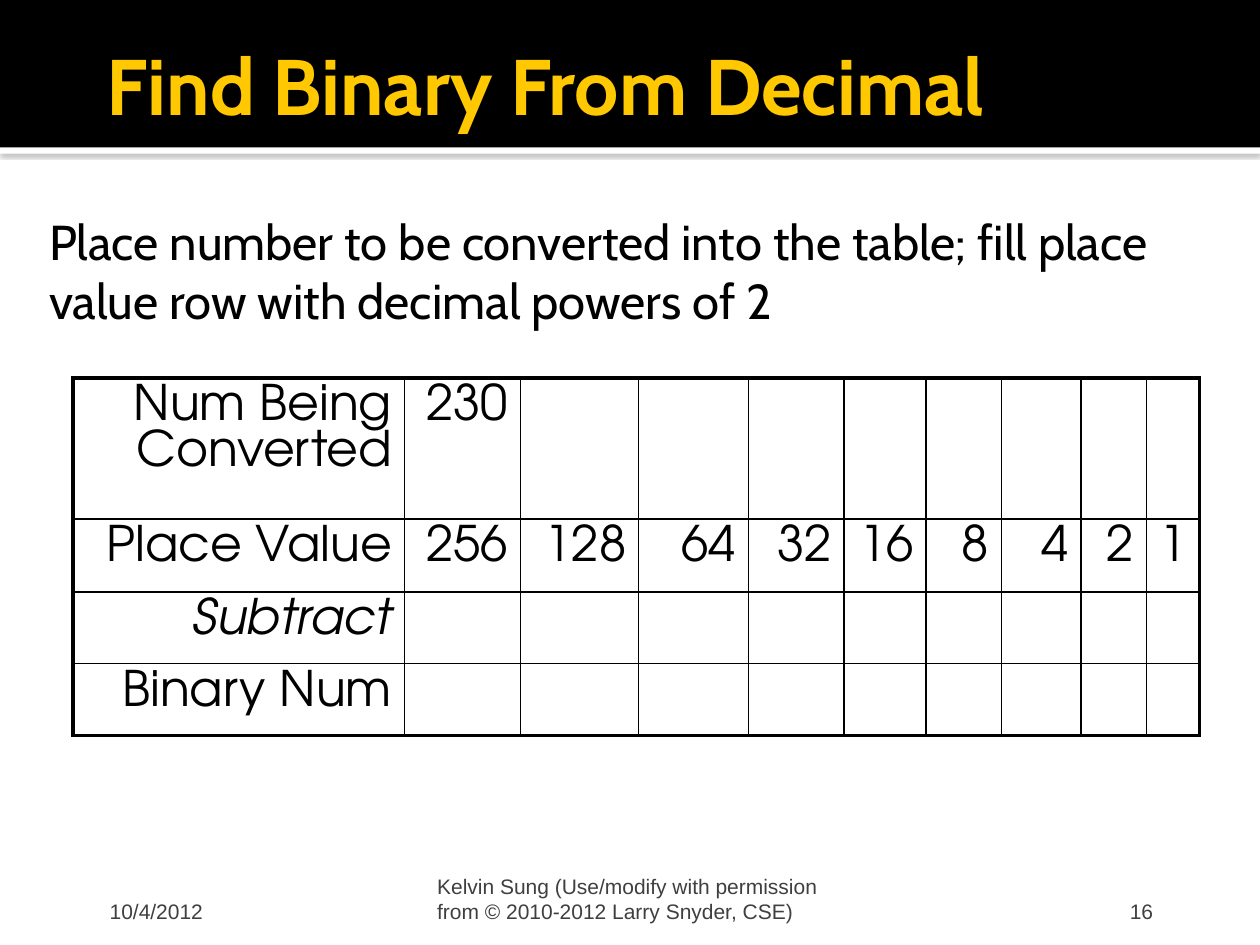
"""Builds a slide with a table for converting a decimal number to binary."""
from lxml import etree
from pptx import Presentation
from pptx.dml.color import RGBColor
from pptx.enum.shapes import MSO_SHAPE
from pptx.enum.text import MSO_ANCHOR, PP_ALIGN
from pptx.oxml.ns import qn
from pptx.util import Inches, Pt

RECTANGLE = MSO_SHAPE.RECTANGLE
TOP, MIDDLE, BOTTOM = MSO_ANCHOR.TOP, MSO_ANCHOR.MIDDLE, MSO_ANCHOR.BOTTOM
LEFT, RIGHT = PP_ALIGN.LEFT, PP_ALIGN.RIGHT

BLACK, WHITE, GOLD, GRAY, SHADOW = "000000", "FFFFFF", "FFC800", "3F3F3F", "808080"
COLUMN_WIDTHS = [2.63, 0.92, 0.94, 0.87, 0.76, 0.65, 0.6, 0.63, 0.52, 0.42]
ROW_HEIGHTS = [1.12, 0.58, 0.56, 0.57]
PLACE_VALUES = [str(2 ** power) for power in range(8, -1, -1)]
CONVERSION_ROWS = [
    ["Num Being Converted", "230"],
    ["Place Value", *PLACE_VALUES],
    ["Subtract"],
    ["Binary Num"],
]


def color(value):
    return RGBColor.from_string(value)


def add_element(parent, tag, **attributes):
    element = etree.SubElement(parent, qn(tag))
    for name, value in attributes.items():
        element.set(name, str(value))
    return element


class SlideBuilder:
    heading_font = "Cabin"
    table_font = "TeX Gyre Adventor"
    footer_font = "Arial"
    inner_border, outer_border = Pt(1), Pt(2.25)

    def __init__(self, slide):
        self.slide = slide

    def band(self, top, height, fill):
        shape = self.slide.shapes.add_shape(
            RECTANGLE, 0, Inches(top), Inches(10), Inches(height))
        shape.fill.solid()
        shape.fill.fore_color.rgb = color(fill)
        shape.line.fill.background()
        shape.shadow.inherit = False
        return shape

    def soft_shadow(self, shape):
        effects = shape._element.spPr.find(qn("a:effectLst"))
        shadow = add_element(effects, "a:outerShdw", blurRad=Pt(2.5), dist=Pt(0.8),
                             dir=90 * 60000, algn="tl", rotWithShape=0)
        shade = add_element(shadow, "a:srgbClr", val=SHADOW)
        add_element(shade, "a:alpha", val=60000)

    def format_text(self, text_frame, font_name, size, fill, align=LEFT,
                    bold=False, italic=False):
        for paragraph in text_frame.paragraphs:
            paragraph.alignment = align
            for run in paragraph.runs:
                run.font.name = font_name
                run.font.size = Pt(size)
                run.font.color.rgb = color(fill)
                run.font.bold = bold
                run.font.italic = italic

    def text(self, text, box, margins, anchor, font_name, size, fill, **style):
        shape = self.slide.shapes.add_textbox(*map(Inches, box))
        frame = shape.text_frame
        frame.word_wrap = True
        frame.vertical_anchor = anchor
        (frame.margin_left, frame.margin_top,
         frame.margin_right, frame.margin_bottom) = map(Inches, margins)
        frame.text = text
        self.format_text(frame, font_name, size, fill, **style)

    def footer(self, text, left, width, margin_left, margin_right, align=LEFT):
        self.text(text, (left, 6.83, width, 0.5), (margin_left, 0.05, margin_right, 0),
                  BOTTOM, self.footer_font, 12, GRAY, align=align)

    def borders(self, cell, outer_sides):
        properties = cell._tc.get_or_add_tcPr()
        for side in "LRTB":
            width = self.outer_border if side in outer_sides else self.inner_border
            line = add_element(properties, f"a:ln{side}", w=width)
            add_element(add_element(line, "a:solidFill"), "a:srgbClr", val=BLACK)

    def table(self, rows, left, top, widths, heights):
        last_row, last_column = len(heights) - 1, len(widths) - 1
        table = self.slide.shapes.add_table(
            len(heights), len(widths), Inches(left), Inches(top),
            Inches(sum(widths)), Inches(sum(heights))).table
        table.first_row = table.horz_banding = False
        for column, width in zip(table.columns, widths):
            column.width = Inches(width)
        for row_index, (row, height) in enumerate(zip(table.rows, heights)):
            row.height = Inches(height)
            for column_index, cell in enumerate(row.cells):
                edges = {"L": column_index == 0, "R": column_index == last_column,
                         "T": row_index == 0, "B": row_index == last_row}
                self.borders(cell, [side for side, outer in edges.items() if outer])
                cell.fill.background()
                if column_index < len(rows[row_index]):
                    self.cell_text(cell, rows[row_index][column_index])

    def cell_text(self, cell, text):
        cell.text_frame.text = text
        self.format_text(cell.text_frame, self.table_font, 28, BLACK,
                         align=RIGHT, italic=text == "Subtract")


def main():
    presentation = Presentation()
    presentation.slide_width, presentation.slide_height = Inches(10), Inches(7.5)
    builder = SlideBuilder(presentation.slides.add_slide(presentation.slide_layouts[6]))

    builder.soft_shadow(builder.band(1.17, 0.05, WHITE))
    builder.band(0, 1.17, BLACK)
    builder.text("Find Binary From Decimal", (0.75, 0.17, 8.5, 1),
                 (0.1, 0.05, 0.05, 0.05), MIDDLE, builder.heading_font, 45, GOLD, bold=True)
    builder.text("Place number to be converted into the table; "
                 "fill place value row with decimal powers of 2",
                 (0.33, 1.58, 9.34, 4.5), (0.06, 0.1, 0.1, 0.05), TOP,
                 builder.heading_font, 28, BLACK)
    builder.table(CONVERSION_ROWS, 0.58, 3, COLUMN_WIDTHS, ROW_HEIGHTS)
    builder.footer("10/4/2012", 0.75, 2.08, 0.12, 0.05)
    builder.footer("Kelvin Sung (Use/modify with permission from "
                   "© 2010-2012 Larry Snyder, CSE)", 3.42, 3.17, 0.05, 0.05)
    builder.footer("16", 7.17, 2.08, 0.1, 0.1, align=RIGHT)

    presentation.save("out.pptx")


if __name__ == "__main__":
    main()
